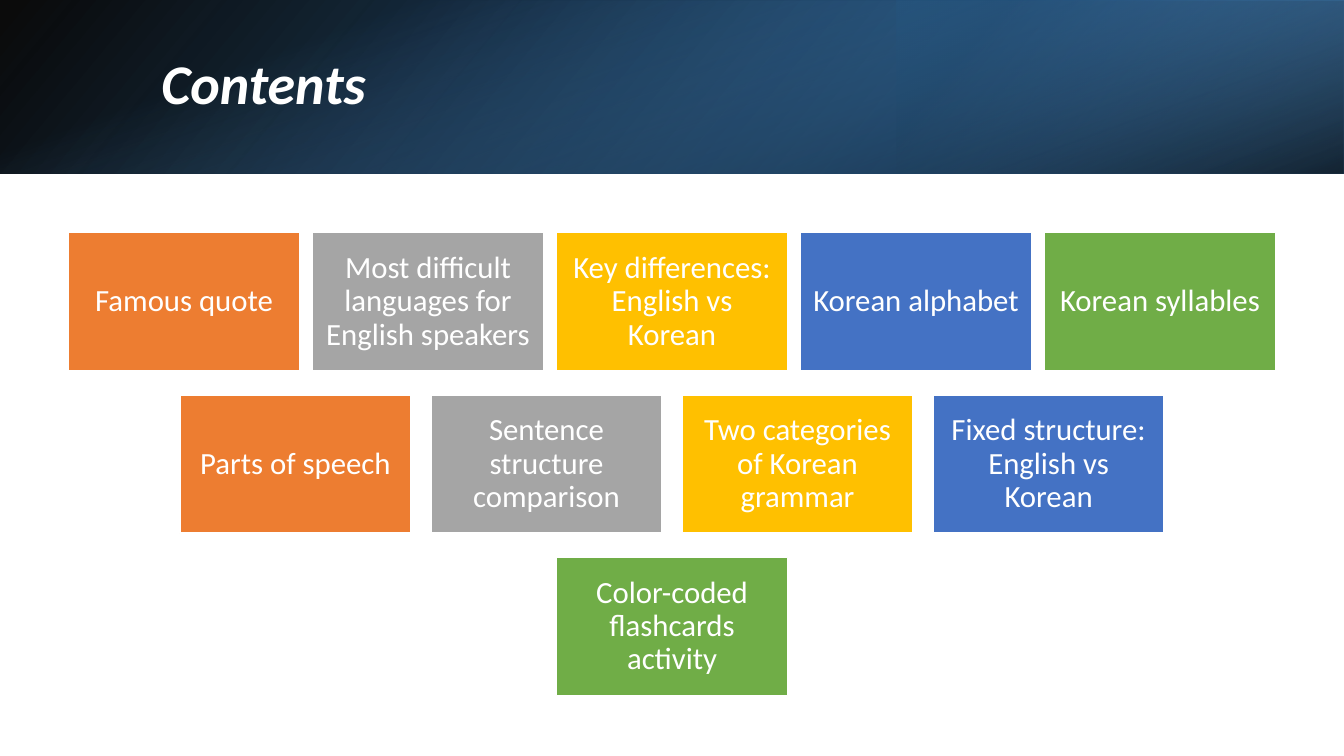
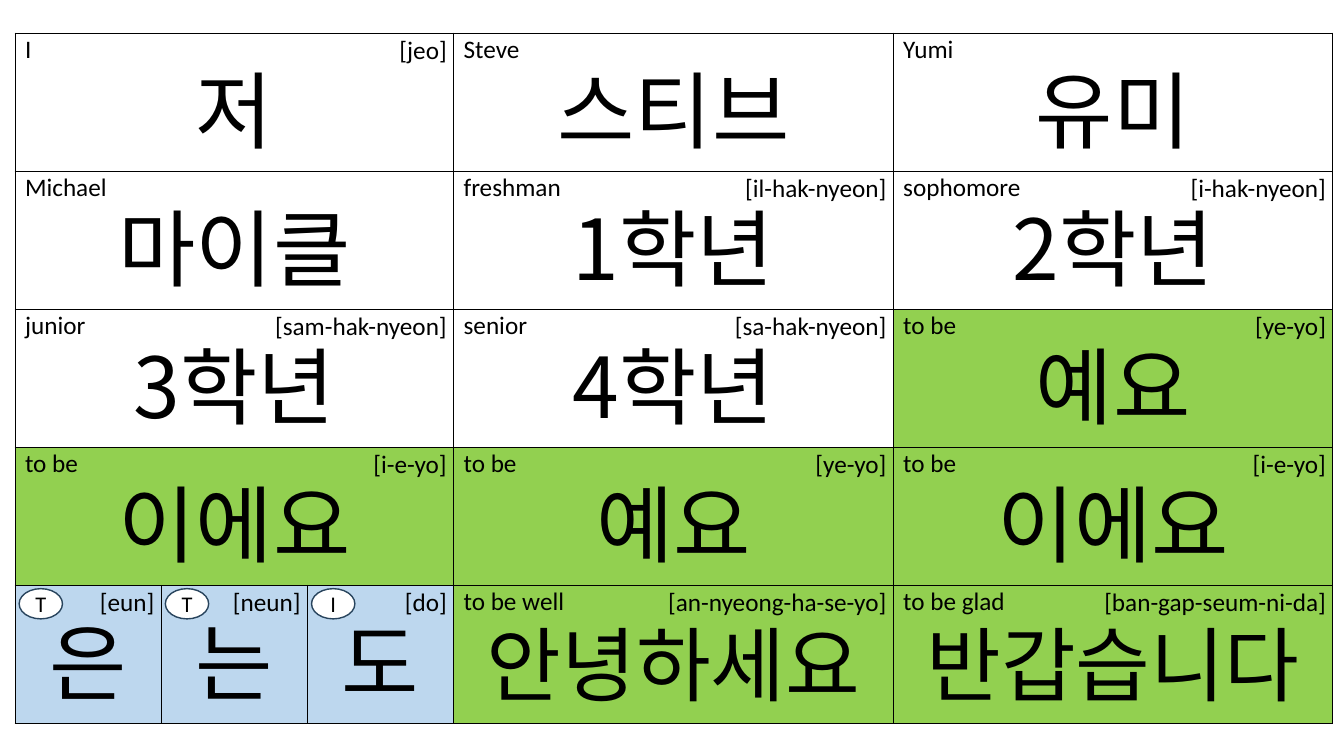
from itertools import cycle

from pptx import Presentation
from pptx.dml.color import RGBColor
from pptx.enum import shapes, text
from pptx.oxml import parse_xml
from pptx.oxml.ns import nsdecls, qn
from pptx.util import Inches, Pt

COLOURS = {
    "white": "FFFFFF", "black": "000000", "orange": "ED7D31", "grey": "A5A5A5",
    "gold": "FFC000", "blue": "4472C4", "green": "70AD47", "sky": "5B9BD5",
    "ocean": "2E75B6", "navy": "1F4E79", "verb": "92D050", "particle": "BDD7EE",
    "badge line": "28445D",
}
LATIN, KOREAN = "Calibri", "Noto Sans CJK KR"
SLIDE_WIDTH, SLIDE_HEIGHT = 13.33, 7.5
MARGINS = ("margin_left", "margin_top", "margin_right", "margin_bottom")

# box, rotation, flipped, gradient angle, stops of (position, colour, opacity)
HEADER_BANDS = [
    ((0, 0, 13.33, 1.72), 0, True, 140, [(0, "black", 96), (100, "ocean", 100)]),
    ((8.89, 0, 4.44, 1.72), 180, True, 320, [(19, "navy", 68), (100, "sky", 79)]),
    ((5.8, -5.8, 1.72, 13.33), 90, False, 340, [(23, "sky", 0), (99, "black", 74)]),
]

TITLE = "Contents"
TOPIC_ROWS = [
    ["Famous quote", "Most difficult languages for English speakers",
     "Key differences: English vs Korean", "Korean alphabet", "Korean syllables"],
    ["Parts of speech", "Sentence structure comparison",
     "Two categories of Korean grammar", "Fixed structure: English vs Korean"],
    ["Color-coded flashcards activity"],
]
TOPIC_COLOURS = ["orange", "grey", "gold", "blue", "green"]
TOPIC_WIDTH, TOPIC_HEIGHT = 2.29, 1.37
TOPIC_TOP, TOPIC_ROW_STEP = 2.31, 1.61
TOPIC_GAPS = [0.13, 0.2, 0]

# word, meaning (or particle badge), pronunciation, fill
FLASHCARD_ROWS = [
    [("저", "I", "[jeo]", "white"), ("스티브", "Steve", "", "white"),
     ("유미", "Yumi", "", "white")],
    [("마이클", "Michael", "", "white"), ("1학년", "freshman", "[il-hak-nyeon]", "white"),
     ("2학년", "sophomore", "[i-hak-nyeon]", "white")],
    [("3학년", "junior", "[sam-hak-nyeon]", "white"),
     ("4학년", "senior", "[sa-hak-nyeon]", "white"), ("예요", "to be", "[ye-yo]", "verb")],
    [("이에요", "to be", "[i-e-yo]", "verb"), ("예요", "to be", "[ye-yo]", "verb"),
     ("이에요", "to be", "[i-e-yo]", "verb")],
    [("은", "T", "[eun]", "particle"), ("는", "T", "[neun]", "particle"),
     ("도", "I", "[do]", "particle"),
     ("안녕하세요", "to be well", "[an-nyeong-ha-se-yo]", "verb"),
     ("반갑습니다", "to be glad", "[ban-gap-seum-ni-da]", "verb")],
]
TABLE_LEFT, TABLE_TOP, ROW_HEIGHT = 0.15, 0.33, 1.37
COLUMN_WIDTHS = [1.45, 1.45, 1.45, 4.36, 4.36]
LONG_WORD = 5


def rgb(name):
    return RGBColor.from_string(COLOURS[name])


def inches(box):
    return [Inches(length) for length in box]


def set_all(target, values):
    for name, value in values.items():
        setattr(target, name, value)


def write(frame, words, size, colour="black", font=LATIN, align=text.PP_ALIGN.LEFT,
          spacing=None, **font_values):
    paragraph = frame.paragraphs[0]
    set_all(paragraph, {"alignment": align, "line_spacing": spacing})
    run = paragraph.add_run()
    run.text = words
    set_all(run.font, {"size": Pt(size), "name": font, **font_values})
    run.font.color.rgb = rgb(colour)
    if font == KOREAN:
        run.font._element.append(parse_xml(f'<a:ea {nsdecls("a")} typeface="{font}"/>'))


def add_filled(slide, preset, box, fill, line):
    shape = slide.shapes.add_shape(preset, *inches(box))
    shape.shadow.inherit = False
    shape.fill.solid()
    shape.fill.fore_color.rgb = rgb(fill)
    shape.line.color.rgb = rgb(line)
    shape.line.width = Pt(1)
    return shape


def add_gradient_band(slide, box, rotation, flipped, angle, stops):
    band = slide.shapes.add_shape(shapes.MSO_SHAPE.RECTANGLE, *inches(box))
    band.shadow.inherit = False
    band.rotation = rotation
    band.line.fill.background()
    band.fill.background()
    properties = band.element.spPr
    if flipped:
        properties.find(qn("a:xfrm")).set("flipH", "1")
    stop_xml = "".join(
        f'<a:gs pos="{position * 1000}"><a:srgbClr val="{COLOURS[colour]}">'
        f'<a:alpha val="{opacity * 1000}"/></a:srgbClr></a:gs>'
        for position, colour, opacity in stops)
    gradient = parse_xml(
        f'<a:gradFill {nsdecls("a")} rotWithShape="1"><a:gsLst>{stop_xml}</a:gsLst>'
        f'<a:lin ang="{angle * 60000}" scaled="0"/></a:gradFill>')
    properties.replace(properties.find(qn("a:noFill")), gradient)


def add_label(slide, words, box, align):
    frame = slide.shapes.add_textbox(*inches(box)).text_frame
    set_all(frame, {"word_wrap": True,
                    "auto_size": text.MSO_AUTO_SIZE.SHAPE_TO_FIT_TEXT})
    write(frame, words, 18, align=align)


def add_badge(slide, letter, left, top):
    badge = add_filled(slide, shapes.MSO_SHAPE.OVAL, (left, top, 0.43, 0.3),
                       "white", "badge line")
    set_all(badge.text_frame, {"vertical_anchor": text.MSO_ANCHOR.MIDDLE,
                               **dict.fromkeys(MARGINS, 0)})
    write(badge.text_frame, letter, 16, align=text.PP_ALIGN.CENTER)


def style_cell(cell, fill):
    properties = cell._tc.get_or_add_tcPr()
    for side in ("lnL", "lnR", "lnT", "lnB"):
        properties.append(parse_xml(
            f'<a:{side} {nsdecls("a")} w="12700"><a:solidFill>'
            f'<a:srgbClr val="{COLOURS["black"]}"/></a:solidFill></a:{side}>'))
    cell.fill.solid()
    cell.fill.fore_color.rgb = rgb(fill)
    cell.vertical_anchor = text.MSO_ANCHOR.BOTTOM


def build_contents(presentation):
    slide = presentation.slides.add_slide(presentation.slide_layouts[5])
    for band in HEADER_BANDS:
        add_gradient_band(slide, *band)

    title = slide.shapes.title
    title.element.getparent().append(title.element)  # in front of the bands
    set_all(title, dict(zip(("left", "top", "width", "height"),
                            inches((1.5, 0.38, 10.98, 0.96)))))
    title.text_frame.vertical_anchor = text.MSO_ANCHOR.MIDDLE
    write(title.text_frame, TITLE, 40, "white", spacing=0.9, bold=True, italic=True)

    colours = cycle(TOPIC_COLOURS)
    for row, (topics, gap) in enumerate(zip(TOPIC_ROWS, TOPIC_GAPS)):
        step = TOPIC_WIDTH + gap
        first_left = (SLIDE_WIDTH - len(topics) * step + gap) / 2
        for column, topic in enumerate(topics):
            box = (first_left + column * step, TOPIC_TOP + row * TOPIC_ROW_STEP,
                   TOPIC_WIDTH, TOPIC_HEIGHT)
            tile = add_filled(slide, shapes.MSO_SHAPE.RECTANGLE, box,
                              next(colours), "white")
            set_all(tile.text_frame, {
                "word_wrap": True, "vertical_anchor": text.MSO_ANCHOR.MIDDLE,
                **dict.fromkeys(MARGINS, Inches(0.09))})
            write(tile.text_frame, topic, 22, "white",
                  align=text.PP_ALIGN.CENTER, spacing=0.9)


def build_flashcards(presentation):
    slide = presentation.slides.add_slide(presentation.slide_layouts[6])
    row_count, column_count = len(FLASHCARD_ROWS), len(COLUMN_WIDTHS)
    table = slide.shapes.add_table(
        row_count, column_count,
        *inches((TABLE_LEFT, TABLE_TOP, sum(COLUMN_WIDTHS), row_count * ROW_HEIGHT))).table
    set_all(table, {"first_row": False, "horz_banding": False})
    for column, width in zip(table.columns, COLUMN_WIDTHS):
        column.width = Inches(width)

    for row, cards in enumerate(FLASHCARD_ROWS):
        table.rows[row].height = Inches(ROW_HEIGHT)
        top = TABLE_TOP + row * ROW_HEIGHT
        first_span = column_count - len(cards) + 1
        start = 0
        for word, meaning, pronunciation, fill in cards:
            end = start + (first_span if start == 0 else 1)
            left = TABLE_LEFT + sum(COLUMN_WIDTHS[:start])
            right = TABLE_LEFT + sum(COLUMN_WIDTHS[:end])
            for column in range(start, end):
                style_cell(table.cell(row, column), fill)
            cell = table.cell(row, start)
            if end - start > 1:
                cell.merge(table.cell(row, end - 1))
            write(cell.text_frame, word, 58 if len(word) >= LONG_WORD else 60,
                  font=KOREAN, align=text.PP_ALIGN.CENTER)

            is_particle = fill == "particle"
            if is_particle:
                add_badge(slide, meaning, left + 0.04, top + 0.03)
            else:
                add_label(slide, meaning, (left, top - 0.05, 1.65, 0.4),
                          text.PP_ALIGN.LEFT)
            if pronunciation:
                width = 1.08 if is_particle else 2.5
                add_label(slide, pronunciation,
                          (right + 0.03 - width, top - 0.04, width, 0.4),
                          text.PP_ALIGN.RIGHT)
            start = end


def main():
    presentation = Presentation()
    set_all(presentation, {"slide_width": Inches(SLIDE_WIDTH),
                           "slide_height": Inches(SLIDE_HEIGHT)})
    build_contents(presentation)
    build_flashcards(presentation)
    presentation.save("out.pptx")


if __name__ == "__main__":
    main()
